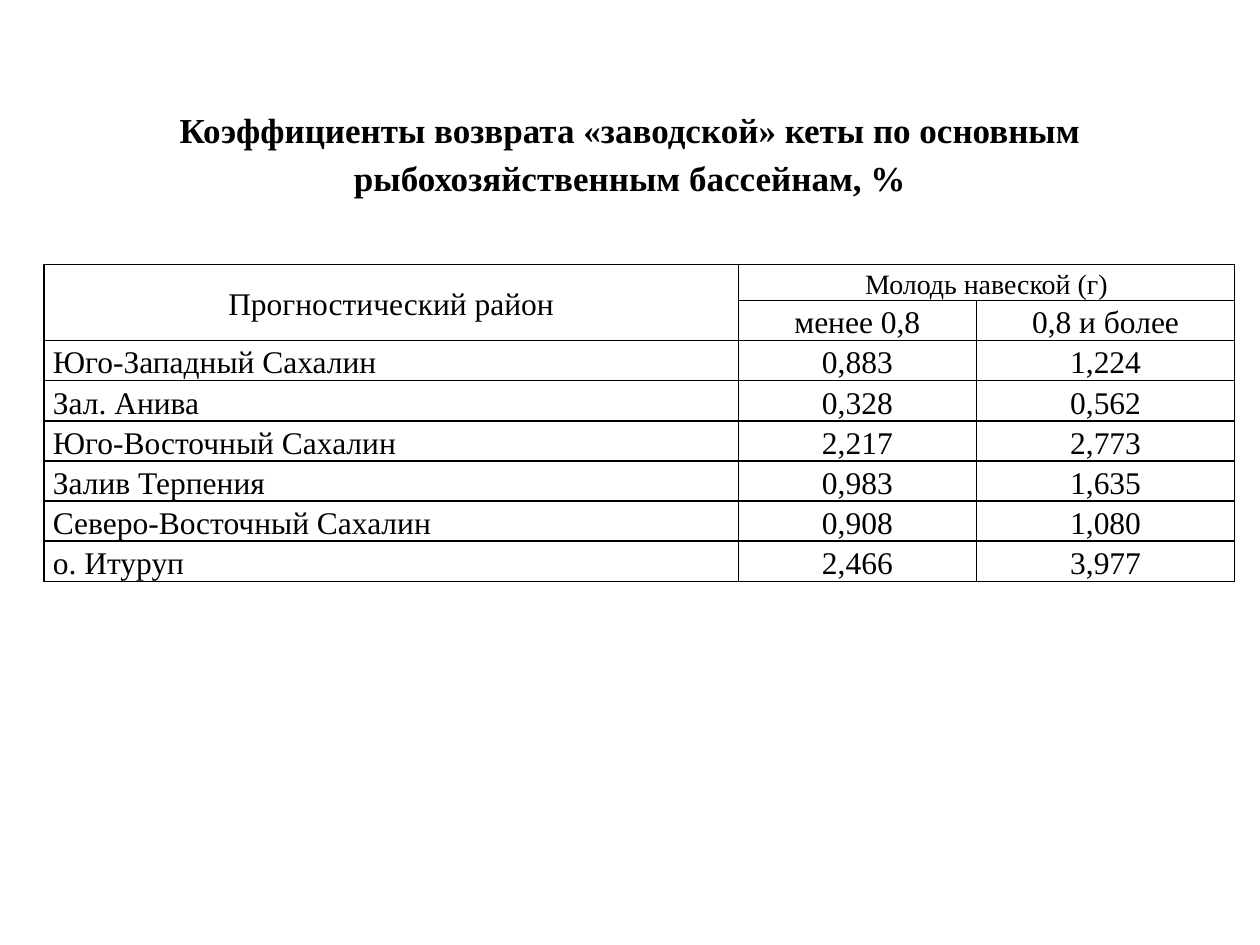
from dataclasses import dataclass

from lxml.etree import SubElement
from pptx import Presentation
from pptx.dml.color import RGBColor
from pptx.enum.text import MSO_ANCHOR, MSO_AUTO_SIZE, PP_ALIGN
from pptx.oxml.ns import qn
from pptx.util import Inches, Pt


@dataclass(frozen=True)
class Theme:
    font: str = "Times New Roman"
    ink: str = "000000"
    title_size: int = 20
    body_size: int = 18
    group_size: int = 16
    line_spacing: float = 1.15
    border_width: int = 1
    cell_margin: float = 0.07


TITLE = ["Коэффициенты возврата «заводской» кеты по основным",
         "рыбохозяйственным бассейнам, %"]
HEADERS = [("Прогностический район", "Молодь навеской (г)", ""),
           ("", "менее 0,8", "0,8 и более")]
RETURN_RATES = [
    ("Юго-Западный Сахалин", "0,883", "1,224"),
    ("Зал. Анива", "0,328", "0,562"),
    ("Юго-Восточный Сахалин", "2,217", "2,773"),
    ("Залив Терпения", "0,983", "1,635"),
    ("Северо-Восточный Сахалин", "0,908", "1,080"),
    ("о. Итуруп", "2,466", "3,977"),
]
COLUMN_WIDTHS = [5.51, 1.89, 2.05]
HEADER_HEIGHT, RATE_HEIGHT = 0.24, 0.26


class SlideBuilder:
    def __init__(self, slide, theme):
        self.slide = slide
        self.theme = theme

    def style(self, paragraph, size, align=PP_ALIGN.CENTER, bold=False):
        paragraph.alignment = align
        paragraph.line_spacing = self.theme.line_spacing
        font = paragraph.font
        font.name, font.size, font.bold = self.theme.font, Pt(size), bold
        font.color.rgb = RGBColor.from_string(self.theme.ink)

    def title(self, lines, left, top, width, height):
        box = self.slide.shapes.add_textbox(
            Inches(left), Inches(top), Inches(width), Inches(height))
        frame = box.text_frame
        frame.word_wrap = True
        frame.auto_size = MSO_AUTO_SIZE.SHAPE_TO_FIT_TEXT
        frame.text = "\n".join(lines)
        for paragraph in frame.paragraphs:
            self.style(paragraph, self.theme.title_size, bold=True)

    def border(self, cell):
        properties = cell._tc.get_or_add_tcPr()
        for side in ("lnL", "lnR", "lnT", "lnB"):
            line = SubElement(properties, qn(f"a:{side}"),
                              w=str(Pt(self.theme.border_width)))
            fill = SubElement(line, qn("a:solidFill"))
            SubElement(fill, qn("a:srgbClr"), val=self.theme.ink)

    def cell(self, cell, text, size, align):
        cell.text = text
        cell.vertical_anchor = MSO_ANCHOR.MIDDLE
        cell.margin_left = cell.margin_right = Inches(self.theme.cell_margin)
        cell.margin_top = cell.margin_bottom = 0
        self.style(cell.text_frame.paragraphs[0], size, align)
        self.border(cell)
        cell.fill.background()

    def rates_table(self, headers, rates, left, top):
        rows = headers + rates
        heights = [HEADER_HEIGHT] * len(headers) + [RATE_HEIGHT] * len(rates)
        table = self.slide.shapes.add_table(
            len(rows), len(COLUMN_WIDTHS), Inches(left), Inches(top),
            Inches(sum(COLUMN_WIDTHS)), Inches(sum(heights))).table
        table.first_row = table.horz_banding = False
        for column, width in zip(table.columns, COLUMN_WIDTHS):
            column.width = Inches(width)
        for row, height in zip(table.rows, heights):
            row.height = Inches(height)

        for r, row in enumerate(rows):
            for c, text in enumerate(row):
                is_region = r >= len(headers) and c == 0
                is_group = r == 0 and c > 0
                self.cell(
                    table.cell(r, c), text,
                    self.theme.group_size if is_group else self.theme.body_size,
                    PP_ALIGN.LEFT if is_region else PP_ALIGN.CENTER)
        table.cell(0, 0).merge(table.cell(1, 0))
        table.cell(0, 1).merge(table.cell(0, 2))


def main():
    presentation = Presentation()
    presentation.slide_width, presentation.slide_height = Inches(10), Inches(7.5)
    slide = presentation.slides.add_slide(presentation.slide_layouts[6])
    builder = SlideBuilder(slide, Theme())
    builder.rates_table(HEADERS, RETURN_RATES, left=0.35, top=2.1)
    builder.title(TITLE, left=0, top=0.76, width=10, height=0.84)
    presentation.save("out.pptx")


if __name__ == "__main__":
    main()
